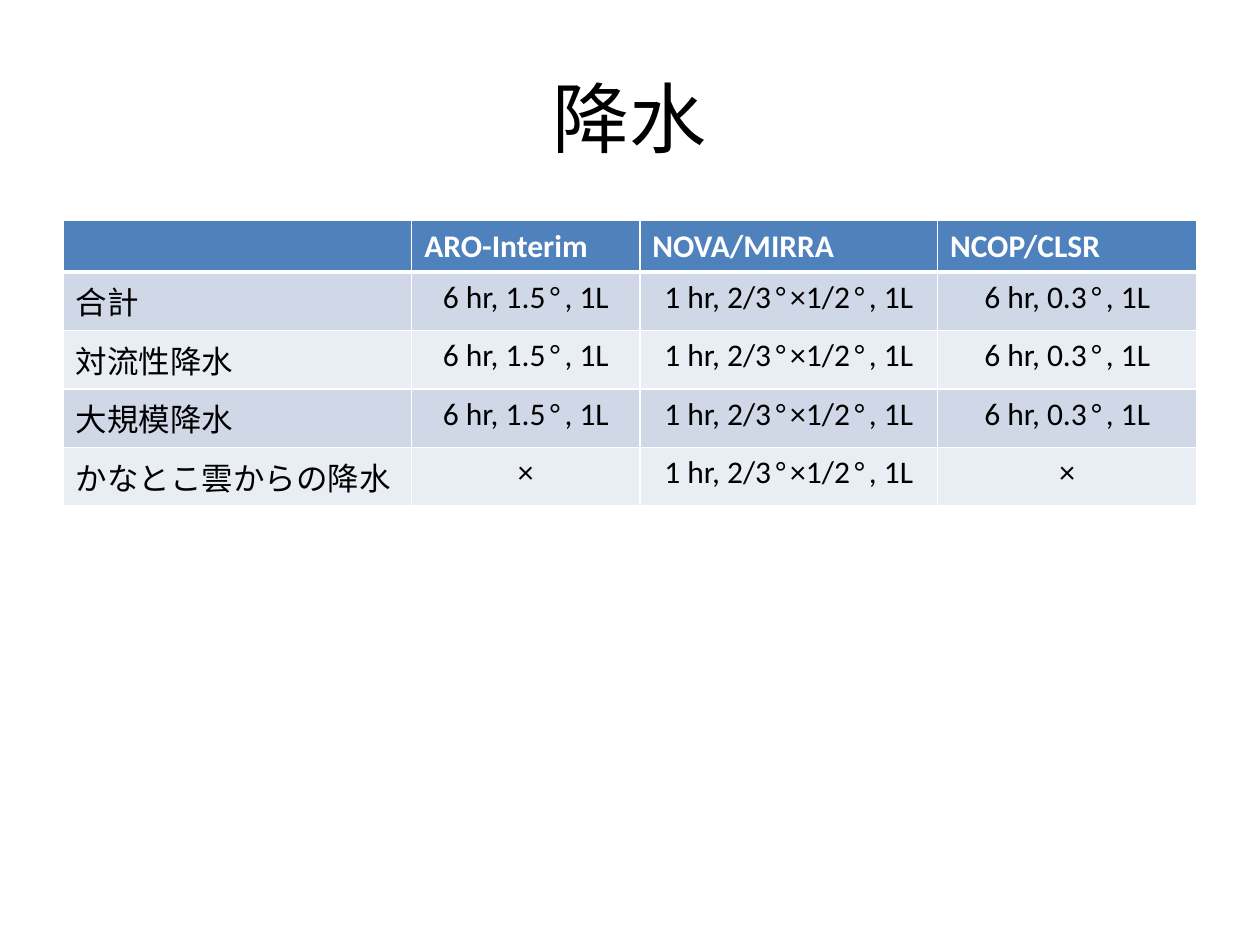
from dataclasses import dataclass
from itertools import groupby

from lxml.etree import SubElement
from pptx import Presentation
from pptx.dml.color import RGBColor as Rgb
from pptx.enum.text import MSO_ANCHOR as Anchor, PP_ALIGN as Align
from pptx.oxml.ns import qn
from pptx.util import Cm, Pt


@dataclass(frozen=True)
class Theme:
    font: str = "Calibri"
    mono: str = "Courier New"
    ink: str = "000000"
    white: str = "FFFFFF"
    head: str = "4F81BD"
    bands: tuple = ("E9EDF4", "D0D8E8")
    title: int = 44
    body: int = 18


theme = Theme()


def style(para, size, color, bold=False):
    font = para.font
    font.name, font.size, font.bold = theme.font, Pt(size), bold
    font.color.rgb = Rgb.from_string(color)


def edge(cell, widths):
    """Draw white borders; widths maps a side (L, R, T, B) to points."""
    props = cell._tc.get_or_add_tcPr()
    for spot, (side, width) in enumerate(widths.items()):
        line = SubElement(props, qn(f"a:ln{side}"), w=str(Pt(width)))
        fill = SubElement(line, qn("a:solidFill"))
        SubElement(fill, qn("a:srgbClr"), val=theme.white)
        props.insert(spot, line)


deck = Presentation()
deck.slide_width, deck.slide_height = Cm(25.4), Cm(19.05)
slide = deck.slides.add_slide(deck.slide_layouts[6])

# Title
box = slide.shapes.add_textbox(Cm(1.27), Cm(0.76), Cm(22.86), Cm(3.18))
frame = box.text_frame
frame.word_wrap = True
frame.vertical_anchor = Anchor.MIDDLE
para = frame.paragraphs[0]
para.text = "降水"
para.alignment = Align.CENTER
style(para, theme.title, theme.ink)

# Table of rainfall data, with the grid of each data set
coarse, mid, fine = "6 hr, 1.5°, 1L", "1 hr, 2/3°×1/2°, 1L", "6 hr, 0.3°, 1L"
rows = [
    ("", "ARO-Interim", "NOVA/MIRRA", "NCOP/CLSR"),
    ("合計", coarse, mid, fine),
    ("対流性降水", coarse, mid, fine),
    ("大規模降水", coarse, mid, fine),
    ("かなとこ雲からの降水", "×", mid, "×"),
]
widths = (7.03, 4.6, 6.0, 5.23)
highs = [1.03] + [1.18] * (len(rows) - 1)
table = slide.shapes.add_table(
    len(rows), len(widths), Cm(1.27), Cm(4.45), Cm(sum(widths)), Cm(sum(highs))
).table
for col, width in zip(table.columns, widths):
    col.width = Cm(width)

for r, row in enumerate(rows):
    table.rows[r].height = Cm(highs[r])
    top = r == 0
    for c, text in enumerate(row):
        cell = table.cell(r, c)
        cell.fill.solid()
        cell.fill.fore_color.rgb = Rgb.from_string(theme.head if top else theme.bands[r % 2])
        edge(cell, {"L": 1, "R": 1, "T": 3 if r == 1 else 1, "B": 3 if top else 1})
        para = cell.text_frame.paragraphs[0]
        style(para, theme.body, theme.white if top else theme.ink, top)
        if c and not top:
            para.alignment = Align.CENTER
        for mark, chars in groupby(text, lambda char: char == "°"):
            run = para.add_run()
            run.text = "".join(chars)
            if mark:
                run.font.name = theme.mono

deck.save("out.pptx")
